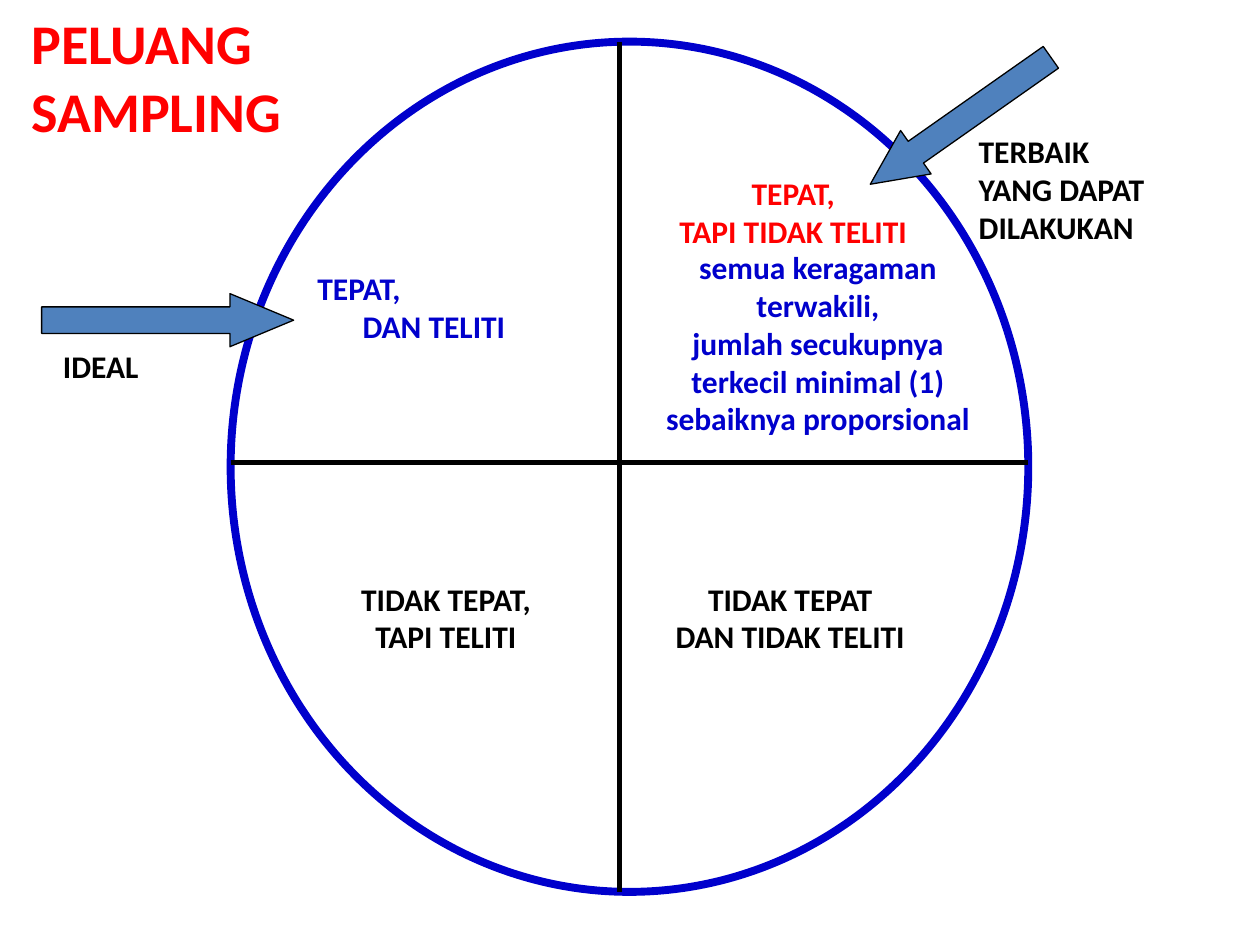
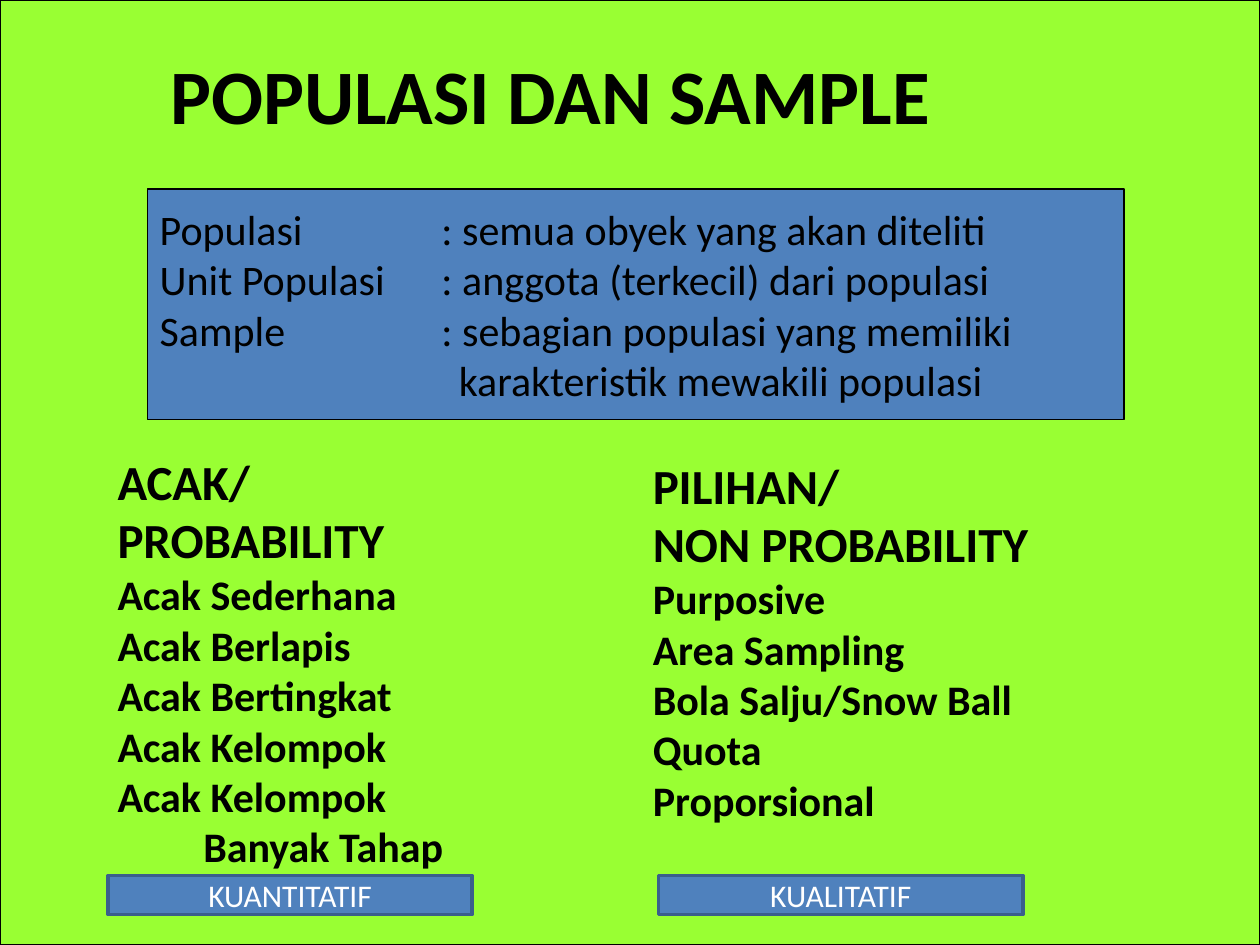
from pptx import Presentation
from pptx import util as u
from pptx.dml.color import RGBColor
from pptx.enum import shapes, text
from pptx.oxml.ns import qn
from lxml import etree

FONT = "Calibri"
BLACK = RGBColor(0, 0, 0)
WHITE = RGBColor(255, 255, 255)
RED = RGBColor(255, 0, 0)
NAVY = RGBColor(0, 0, 0xCC)
STEEL = RGBColor(0x4F, 0x81, 0xBD)
STEEL_DARK = RGBColor(0x3A, 0x5F, 0x8C)
LIME = RGBColor(0x99, 0xFF, 0x33)
LEFT = text.PP_ALIGN.LEFT
CENTER = text.PP_ALIGN.CENTER
Cm = u.Cm
Shape = shapes.MSO_SHAPE


def write(frame, lines, size=18, colour=BLACK, bold=True, align=LEFT,
          anchor=text.MSO_ANCHOR.TOP, wrap=False, indents=None, tab=None):
    frame.auto_size = text.MSO_AUTO_SIZE.NONE
    frame.word_wrap = wrap
    frame.vertical_anchor = anchor
    for index, line in enumerate(lines):
        paragraph = frame.paragraphs[0] if index == 0 else frame.add_paragraph()
        paragraph.alignment = align
        properties = paragraph._p.get_or_add_pPr()
        if indents and index in indents:
            properties.set("marL", str(Cm(indents[index])))
            properties.set("indent", "0")
        if tab:
            stops = etree.SubElement(properties, qn("a:tabLst"))
            etree.SubElement(stops, qn("a:tab"), pos=str(Cm(tab)), algn="l")
        run = paragraph.add_run()
        run.text = line
        run.font.name = FONT
        run.font.size = u.Pt(size[index] if isinstance(size, list) else size)
        run.font.bold = bold
        run.font.color.rgb = colour


def add_label(slide, box, lines, **style):
    label = slide.shapes.add_textbox(*map(Cm, box))
    write(label.text_frame, lines, **style)


def add_title(slide, box, lines, **style):
    title = slide.shapes.title
    title.left, title.top, title.width, title.height = map(Cm, box)
    write(title.text_frame, lines, **style)


def add_figure(slide, kind, box, fill=STEEL, line=BLACK, weight=0.75):
    shape = slide.shapes.add_shape(kind, *map(Cm, box))
    shape.shadow.inherit = False
    if fill is None:
        shape.fill.background()
    else:
        shape.fill.solid()
        shape.fill.fore_color.rgb = fill
    shape.line.color.rgb = line
    shape.line.width = u.Pt(weight)
    return shape


def add_line(slide, x1, y1, x2, y2):
    line = slide.shapes.add_connector(
        shapes.MSO_CONNECTOR.STRAIGHT, Cm(x1), Cm(y1), Cm(x2), Cm(y2))
    line.line.color.rgb = BLACK
    line.line.width = u.Pt(3)
    etree.SubElement(line._element.spPr, qn("a:effectLst"))


def add_arrow(slide, kind, box, head, rotation=0):
    arrow = add_figure(slide, kind, box)
    arrow.adjustments[0] = 0.5
    arrow.adjustments[1] = head
    arrow.rotation = rotation


def add_quadrants(slide, left, top, width, height):
    add_figure(slide, Shape.OVAL, (left, top, width, height), None, NAVY, 4.5)
    middle_x, middle_y = left + 7.84, top + 8.48
    add_line(slide, middle_x, top, middle_x, top + height)
    add_line(slide, left, middle_y, left + width, middle_y)

    add_label(slide, (left + 1.5, top + 4.46, 5, 1.78), ["TEPAT,", "DAN TELITI"],
              colour=NAVY, indents={1: 0.91})
    add_label(slide, (middle_x + 0.4, top + 2.55, 6.2, 1.78),
              ["TEPAT,", "TAPI TIDAK TELITI"], colour=RED, align=CENTER)
    add_label(slide, (middle_x + 0.18, top + 4.04, 7.64, 4.83),
              ["semua keragaman", "terwakili,", "jumlah secukupnya",
               "terkecil minimal (1)", "sebaiknya proporsional"],
              colour=NAVY, align=CENTER)
    lower_top = top + 10.72
    add_label(slide, (left + 1.9, lower_top, 4.88, 1.78),
              ["TIDAK TEPAT,", "TAPI TELITI"], align=CENTER)
    add_label(slide, (middle_x + 0.38, lower_top, 6.12, 1.78),
              ["TIDAK TEPAT", "DAN TIDAK TELITI"], align=CENTER)


def add_ideal_pointer(slide, left, top):
    add_arrow(slide, Shape.RIGHT_ARROW, (left, top, 5.08, 1.07), 1.2)
    add_label(slide, (left + 0.18, top + 0.96, 2.4, 1.02), ["IDEAL"])


def add_best_pointer(slide, left, top):
    add_arrow(slide, Shape.LEFT_ARROW, (left, top, 4.45, 1.07), 1.05, 324.9)
    add_label(slide, (left + 2.34, top + 0.64, 4.7, 2.54),
              ["TERBAIK", "YANG DAPAT", "DILAKUKAN"])


def build_sampling_slide(slide):
    add_title(slide, (0.38, 0.05, 6.48, 2.97), ["PELUANG", "SAMPLING"],
              size=32, colour=RED)
    add_quadrants(slide, 4.65, 0.84, 16.08, 17.14)
    add_best_pointer(slide, 17.14, 1.9)
    add_ideal_pointer(slide, 0.84, 5.92)


def add_backdrop(slide, width, height):
    backdrop = add_figure(slide, Shape.RECTANGLE, (0, 0, width, height), LIME)
    slide.shapes._spTree.insert(2, backdrop._element)


def add_definitions(slide, box):
    panel = add_figure(slide, Shape.RECTANGLE, box)
    write(panel.text_frame,
          ["Populasi\t: semua obyek yang akan diteliti",
           "Unit Populasi\t: anggota (terkecil) dari populasi",
           "Sample\t: sebagian populasi yang memiliki",
           "karakteristik mewakili populasi"],
          size=24, bold=False, anchor=text.MSO_ANCHOR.MIDDLE, wrap=True,
          indents={3: 6.03}, tab=5.68)


def add_method_list(slide, left, top, heading, methods, indents=None):
    sizes = [28] * len(heading) + [24] * len(methods)
    add_label(slide, (left, top, 9.53, 8.7), heading + methods,
              size=sizes, indents=indents)


def add_tag(slide, left, caption):
    tag = add_figure(slide, Shape.RECTANGLE, (left, 17.65, 7.34, 0.79),
                     line=STEEL_DARK, weight=2)
    write(tag.text_frame, [caption], colour=WHITE, bold=False, align=CENTER,
          anchor=text.MSO_ANCHOR.MIDDLE)


def build_population_slide(slide):
    add_backdrop(slide, 25.4, 19.05)
    add_title(slide, (3.18, 0.84, 19.15, 2.11), ["POPULASI DAN SAMPLE"], size=44)
    add_definitions(slide, (2.97, 3.81, 19.69, 4.65))
    add_method_list(slide, 2.12, 8.97, ["ACAK/", "PROBABILITY"],
                    ["Acak Sederhana", "Acak Berlapis", "Acak Bertingkat",
                     "Acak Kelompok", "Acak Kelompok", "Banyak Tahap"], {7: 1.73})
    add_method_list(slide, 12.91, 9.05, ["PILIHAN/", "NON PROBABILITY"],
                    ["Purposive", "Area Sampling", "Bola Salju/Snow Ball",
                     "Quota", "Proporsional"])
    add_tag(slide, 2.18, "KUANTITATIF")
    add_tag(slide, 13.28, "KUALITATIF")


def main():
    presentation = Presentation()
    presentation.slide_width = Cm(25.4)
    presentation.slide_height = Cm(19.05)
    title_only = presentation.slide_layouts[5]
    for build in (build_sampling_slide, build_population_slide):
        build(presentation.slides.add_slide(title_only))
    presentation.save("out.pptx")


if __name__ == "__main__":
    main()
